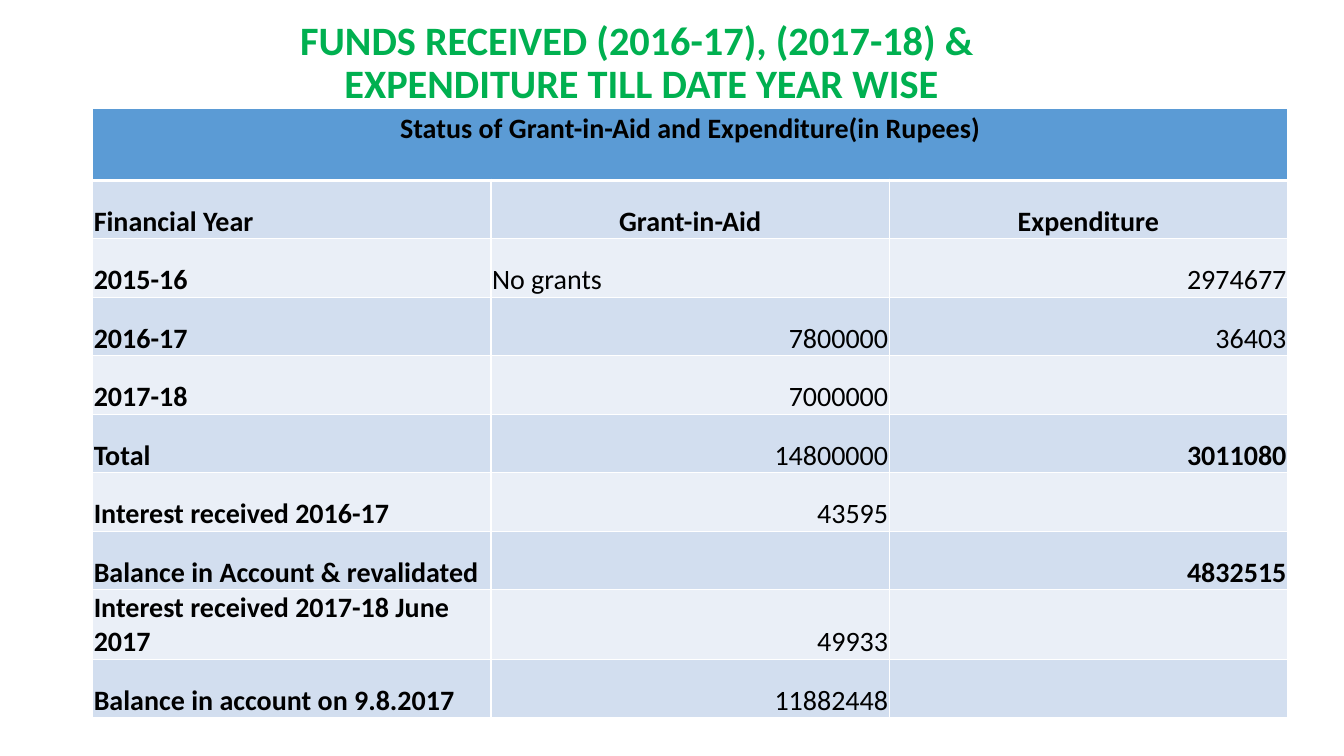
from lxml.etree import SubElement
from pptx import Presentation
from pptx.dml.color import RGBColor
from pptx.enum.text import MSO_ANCHOR as Anchor, MSO_AUTO_SIZE as Fit, PP_ALIGN as Align
from pptx.oxml.ns import qn
from pptx.util import Pt

PX = 9144
TITLE = "FUNDS RECEIVED (2016-17), (2017-18) & \vEXPENDITURE TILL DATE YEAR WISE"
HEAD = "Status of Grant-in-Aid and Expenditure(in Rupees)"
ROWS = [
    ("Financial Year", "Grant-in-Aid", "Expenditure"),
    ("2015-16", "No grants", "2974677"),
    ("2016-17", "7800000", "36403"),
    ("2017-18", "7000000", ""),
    ("Total", "14800000", "3011080"),
    ("Interest received 2016-17", "43595", ""),
    ("Balance in Account & revalidated", "", "4832515"),
    ("Interest received 2017-18 June 2017", "49933", ""),
    ("Balance in account on 9.8.2017", "11882448", ""),
]
STRONG = {"3011080", "4832515"}
BANDS = ("D2DEEF", "EAEFF7")


def px(n):
    return round(n * PX)


def color(code):
    return RGBColor.from_string(code)


def apply(item, style):
    for key, value in style.items():
        setattr(item, key, value)


def write(frame, text, align, size, code, bold):
    frame.text = text
    para = frame.paragraphs[0]
    para.alignment = align
    for run in para.runs:
        apply(run.font, {"name": "Calibri", "size": Pt(size), "bold": bold})
        run.font.color.rgb = color(code)
    return para


def edge(cell, top=1, bottom=1):
    props = cell._tc.get_or_add_tcPr()
    for side, width in {"L": 1, "R": 1, "T": top, "B": bottom}.items():
        line = SubElement(props, qn("a:ln" + side), w=str(Pt(width)))
        fill = SubElement(line, qn("a:solidFill"))
        SubElement(fill, qn("a:srgbClr"), val="FFFFFF")


def paint(cell, code):
    cell.fill.solid()
    cell.fill.fore_color.rgb = color(code)


def fill_cell(cell, text, align, bold, anchor=Anchor.BOTTOM, top=1):
    apply(cell, {"margin_left": px(1), "margin_right": px(1), "margin_top": px(top),
                 "margin_bottom": 0, "vertical_anchor": anchor})
    write(cell.text_frame, text, align, 20, "000000", bold)


def add_title(slide, left, top, width, height):
    title = slide.shapes.title
    apply(title, {"left": px(left), "top": px(top), "width": px(width), "height": px(height)})
    frame = title.text_frame
    apply(frame, {"word_wrap": True, "auto_size": Fit.NONE, "vertical_anchor": Anchor.MIDDLE})
    write(frame, TITLE, Align.CENTER, 28.8, "00B050", True).line_spacing = 0.9


def place(row, col, text):
    if row == 0 and col:
        return Align.CENTER
    return Align.RIGHT if text.isdigit() else Align.LEFT


def add_funds(slide, left, top, width, head, step):
    count = len(ROWS)
    shape = slide.shapes.add_table(count + 1, 3, px(left), px(top), px(width),
                                   px(head + step * count))
    table = shape.table
    for row in table.rows:
        row.height = px(step)
    table.rows[0].height = px(head)
    banner = table.cell(0, 0)
    banner.merge(table.cell(0, 2))
    for col in range(3):
        edge(table.cell(0, col), bottom=3)
        paint(table.cell(0, col), "5B9BD5")
    fill_cell(banner, HEAD, Align.CENTER, True, Anchor.TOP, 3)
    for row, texts in enumerate(ROWS):
        for col, text in enumerate(texts):
            cell = table.cell(row + 1, col)
            edge(cell, top=1 if row else 3)
            paint(cell, BANDS[row % 2])
            if text:
                bold = row == 0 or col == 0 or text in STRONG
                fill_cell(cell, text, place(row, col, text), bold)


def main():
    deck = Presentation()
    apply(deck, {"slide_width": px(1333), "slide_height": px(750)})
    slide = deck.slides.add_slide(deck.slide_layouts[5])
    add_title(slide, 31, 19, 1211, 89)
    add_funds(slide, 92, 108, 1185, 71, 58)
    deck.save("out.pptx")


if __name__ == "__main__":
    main()
